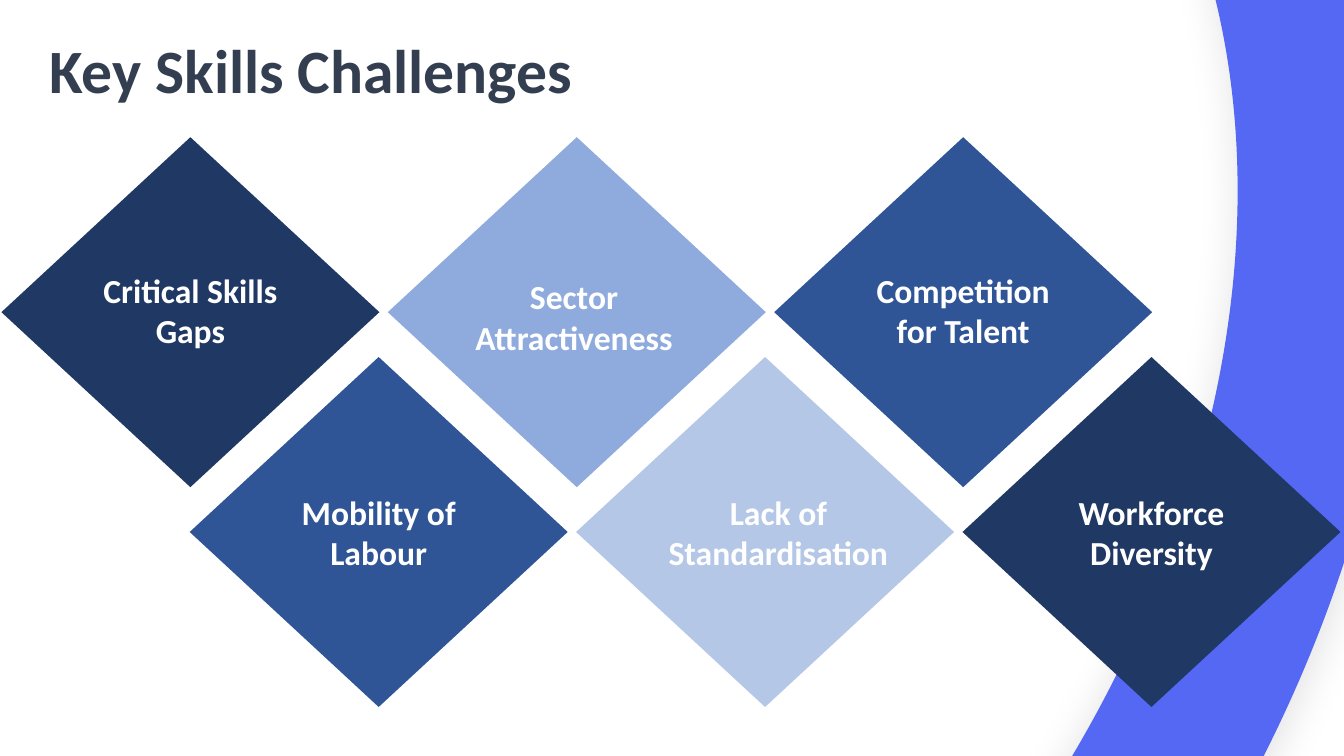
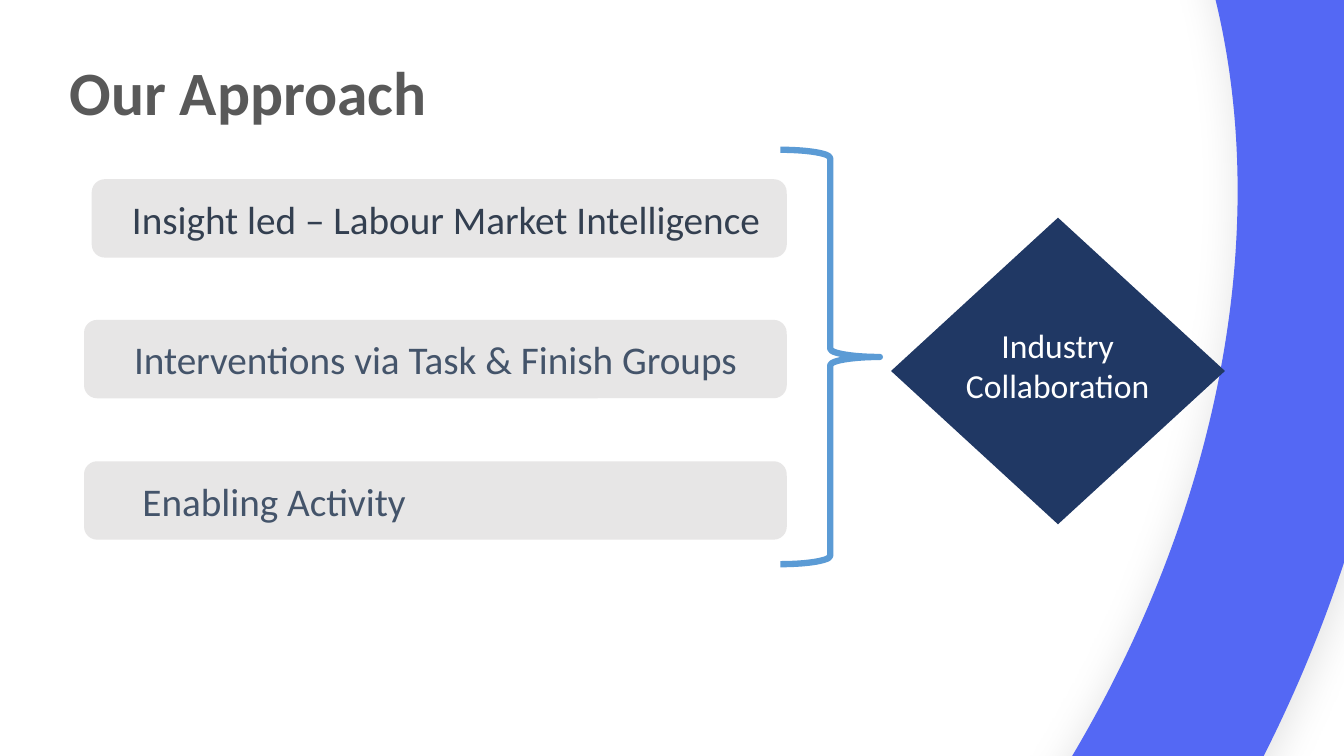
import pptx
import pptx.dml.color
import pptx.enum.shapes
import pptx.enum.text
import pptx.oxml
import pptx.oxml.ns
import pptx.util

Pt = pptx.util.Pt
SHAPE = pptx.enum.shapes.MSO_SHAPE
ALIGN = pptx.enum.text.PP_ALIGN
ANCHOR = pptx.enum.text.MSO_ANCHOR

COLOURS = {
    "ring": "5468F4",
    "navy": "203864",
    "blue": "2F5597",
    "sky": "8FAADC",
    "pale": "B4C7E7",
    "brace": "5B9BD5",
    "card": "E7E6E6",
    "slate": "44546A",
    "ink": "333F50",
    "grey": "595959",
    "white": "FFFFFF",
}

RING_SHADOW = (
    f'<a:effectLst {pptx.oxml.ns.nsdecls("a")}>'
    '<a:outerShdw blurRad="407670" dist="27940" dir="0" algn="ctr" rotWithShape="0">'
    '<a:srgbClr val="000000"><a:alpha val="12000"/></a:srgbClr>'
    "</a:outerShdw></a:effectLst>"
)


def colour(name):
    return pptx.dml.color.RGBColor.from_string(COLOURS[name])


class SlideBuilder:
    font = "Calibri"
    title_size = 44
    card_size = 28
    label_size = 24

    def __init__(self):
        self.deck = pptx.Presentation()
        self.deck.slide_width = Pt(960)
        self.deck.slide_height = Pt(540)
        self.layout = self.deck.slide_layouts[5]
        self.page = None

    def start_page(self, title, left, top, ink):
        first = self.page is None
        self.page = self.deck.slides.add_slide(self.layout)
        if first:
            self.ring()
        box = self.page.shapes.title
        box.left, box.top, box.width, box.height = Pt(left), Pt(top), Pt(828), Pt(104.4)
        box.text_frame.vertical_anchor = ANCHOR.MIDDLE
        box.text_frame.auto_size = pptx.enum.text.MSO_AUTO_SIZE.NONE
        self.add_text(box, title, self.title_size, ink, bold=True).line_spacing = 0.9

    def ring(self):
        """Draw the wide curved band and move it into the shared layout."""
        band = self.shape(SHAPE.OVAL, -514, -282.2, 1559.5, 1198, line="ring", weight=120)
        band.rotation = 129.6
        properties = band.element.spPr
        properties.remove(properties.find(pptx.oxml.ns.qn("a:effectLst")))
        properties.append(pptx.oxml.parse_xml(RING_SHADOW))
        self.layout.shapes.element.insert(2, band.element)

    def add_text(self, box, text, size, ink, align=ALIGN.LEFT, bold=False):
        box.text_frame.word_wrap = True
        para = box.text_frame.paragraphs[0]
        para.alignment = align
        span = para.add_run()
        span.text = text
        span.font.name = self.font
        span.font.size = Pt(size)
        span.font.bold = bold
        span.font.color.rgb = colour(ink)
        return para

    def shape(self, kind, left, top, width, height, fill=None, line=None, weight=1):
        item = self.page.shapes.add_shape(kind, Pt(left), Pt(top), Pt(width), Pt(height))
        item.shadow.inherit = False
        if fill:
            item.fill.solid()
            item.fill.fore_color.rgb = colour(fill)
        else:
            item.fill.background()
        if line:
            item.line.color.rgb = colour(line)
            item.line.width = Pt(weight)
        else:
            item.line.fill.background()
        return item

    def diamond(self, left, top, width, height, fill):
        self.shape(SHAPE.DIAMOND, left, top, width, height, fill)

    def label(self, text, centre, middle, width=167, bold=True):
        """Place a centred text box, wider than the text area inside a diamond."""
        height = 65.5
        box = self.page.shapes.add_textbox(
            Pt(centre - width / 2), Pt(middle - height / 2), Pt(width), Pt(height))
        self.add_text(box, text, self.label_size, "white", ALIGN.CENTER, bold)

    def card(self, text, left, top, inset, ink):
        right = 562
        item = self.shape(SHAPE.ROUNDED_RECTANGLE, left, top, right - left, 56, "card")
        item.text_frame.margin_left = Pt(inset)
        item.text_frame.vertical_anchor = ANCHOR.MIDDLE
        self.add_text(item, text, self.card_size, ink)

    def brace(self, left, top, width, height):
        self.shape(SHAPE.RIGHT_BRACE, left, top, width, height, line="brace", weight=4.5)


def challenges_page(builder):
    builder.start_page("Key Skills Challenges", 28, 0, "ink")
    width, height, step = 270, 250, 276
    # Each challenge: text, fill, label shift across and down, label width
    rows = [
        (1, 98, [
            ("Critical Skills Gaps", "navy", 0, -1, 167),
            ("Sector Attractiveness", "sky", -2, 3.5, 167),
            ("Competition for Talent", "blue", 0, -1, 167),
        ]),
        (135.5, 255, [
            ("Mobility of Labour", "blue", 0, 0.5, 167),
            ("Lack of Standardisation", "pale", 9.5, 0.5, 186),
            ("Workforce Diversity", "navy", 0, 0.5, 167),
        ]),
    ]
    for start, top, challenges in rows:
        for column, (text, fill, across, down, label_width) in enumerate(challenges):
            left = start + column * step
            builder.diamond(left, top, width, height, fill)
            builder.label(text, left + width / 2 + across, top + height / 2 + down, label_width)


def approach_page(builder):
    builder.start_page("Our Approach", 42.5, 16, "grey")
    builder.card("Insight led – Labour Market Intelligence", 65.5, 128, 26, "ink")
    builder.card("Interventions via Task & Finish Groups", 60, 228.5, 33, "slate")
    builder.card("Enabling Activity", 60, 329.5, 39, "slate")
    builder.diamond(636.5, 155.5, 238.5, 219, "navy")
    builder.label("Industry Collaboration", 755.5, 261, 186, bold=False)
    builder.brace(557.5, 107, 71, 296)


def main():
    builder = SlideBuilder()
    challenges_page(builder)
    approach_page(builder)
    builder.deck.save("out.pptx")


if __name__ == "__main__":
    main()
